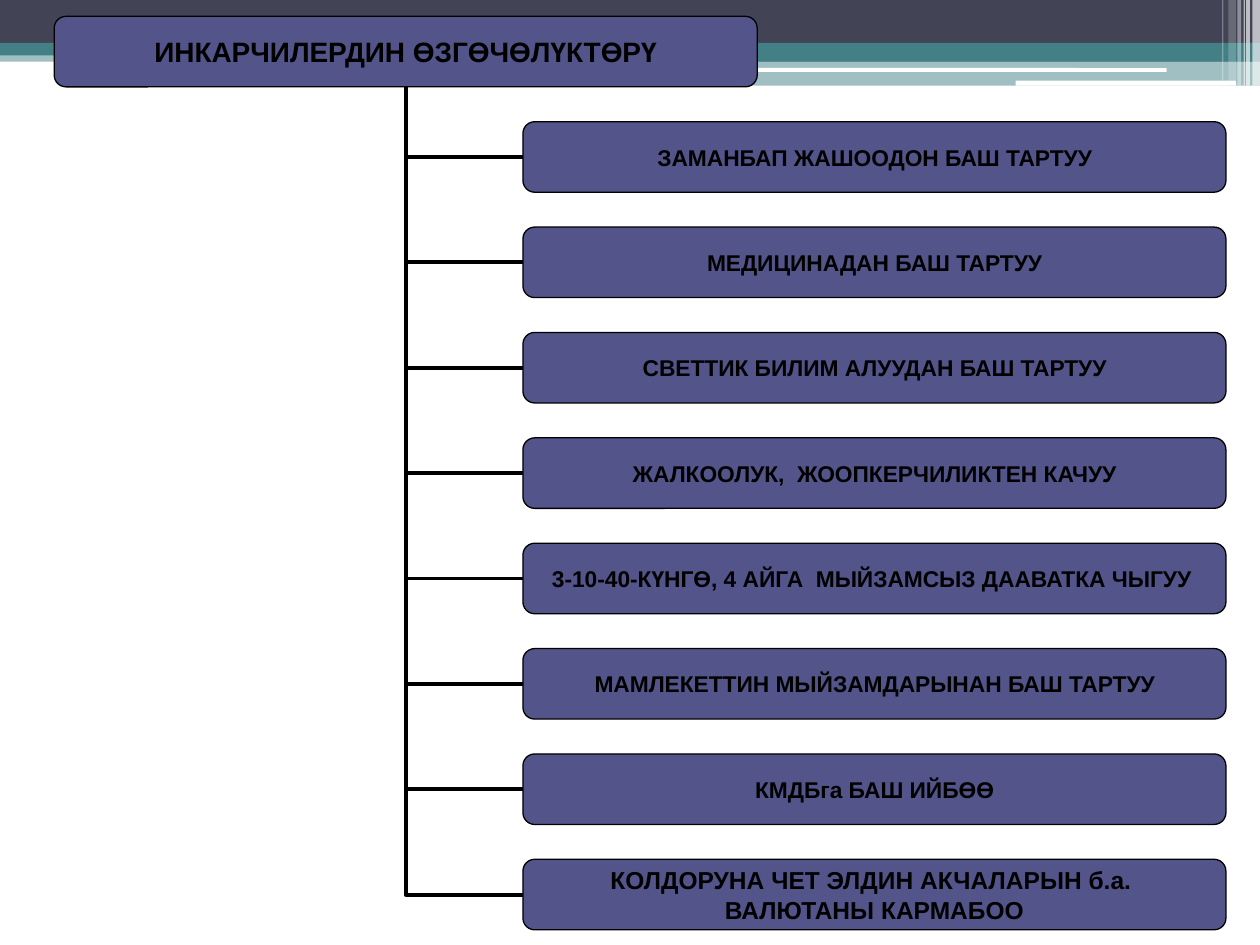
from dataclasses import dataclass

from lxml import etree
from pptx import Presentation
from pptx.dml.color import RGBColor
from pptx.enum.shapes import MSO_CONNECTOR, MSO_SHAPE
from pptx.enum.text import MSO_ANCHOR, PP_ALIGN
from pptx.oxml.ns import qn
from pptx.util import Inches, Pt

RECTANGLE = MSO_SHAPE.RECTANGLE
ROUNDED = MSO_SHAPE.ROUNDED_RECTANGLE
ELBOW = MSO_CONNECTOR.ELBOW
MIDDLE = MSO_ANCHOR.MIDDLE
CENTER = PP_ALIGN.CENTER


@dataclass(frozen=True)
class Theme:
    """Colours, font and point sizes of the slide."""
    dark: str = "424456"
    teal: str = "438086"
    white: str = "FFFFFF"
    box: str = "53548A"
    ink: str = "000000"
    font: str = "Arial"
    root_size: int = 16
    item_size: int = 13
    last_size: int = 14
    outline: float = 0.75
    branch: float = 2.25


THEME = Theme()

BANDS = [
    (RECTANGLE, 0, 0.4, 10, 0.09, THEME.teal, 50),
    (RECTANGLE, 0, 0, 10, 0.34, THEME.dark, 100),
    (RECTANGLE, 0, 0.34, 10, 0.1, THEME.teal, 100),
    (RECTANGLE, 5.92, 0.39, 4.08, 0.1, THEME.teal, 100),
    (RECTANGLE, 5.92, 0.48, 4.08, 0.2, THEME.teal, 50),
    (ROUNDED, 5.91, 0.54, 3.35, 0.03, THEME.white, 100),
    (ROUNDED, 8.06, 0.64, 1.75, 0.04, THEME.white, 100),
]
STRIPES = [
    (9.94, 0.06, 0.68, 65),
    (9.89, 0.03, 0.68, 65),
    (9.87, 0.01, 0.68, 60),
    (9.82, 0.03, 0.68, 40),
    (9.75, 0.06, 0.64, 20),
    (9.7, 0.01, 0.64, 30),
]

ROOT_TEXT = "ИНКАРЧИЛЕРДИН ӨЗГӨЧӨЛҮКТӨРҮ"
ITEMS = [
    "ЗАМАНБАП ЖАШООДОН БАШ ТАРТУУ",
    "МЕДИЦИНАДАН БАШ ТАРТУУ",
    "СВЕТТИК БИЛИМ АЛУУДАН БАШ ТАРТУУ",
    "ЖАЛКООЛУК,  ЖООПКЕРЧИЛИКТЕН КАЧУУ",
    "3-10-40-КҮНГӨ, 4 АЙГА  МЫЙЗАМСЫЗ ДААВАТКА ЧЫГУУ ",
    "МАМЛЕКЕТТИН МЫЙЗАМДАРЫНАН БАШ ТАРТУУ",
    "КМДБга БАШ ИЙБӨӨ",
    "КОЛДОРУНА ЧЕТ ЭЛДИН АКЧАЛАРЫН б.а. \nВАЛЮТАНЫ КАРМАБОО",
]

BOX_WIDTH, BOX_HEIGHT = 5.58, 0.56
ROOT_LEFT, ROOT_TOP = 0.43, 0.13
ITEM_LEFT, LAST_TOP = 4.15, 6.82
ROW_STEP = (LAST_TOP - ROOT_TOP) / len(ITEMS)


def add_block(slide, kind, left, top, width, height, color, opacity=100):
    """Add a filled shape without outline or shadow."""
    shape = slide.shapes.add_shape(
        kind, Inches(left), Inches(top), Inches(width), Inches(height))
    shape.shadow.inherit = False
    shape.fill.solid()
    shape.fill.fore_color.rgb = RGBColor.from_string(color)
    shape.line.fill.background()
    if opacity < 100:
        color_element = shape.fill._xPr.find(".//" + qn("a:srgbClr"))
        alpha = etree.SubElement(color_element, qn("a:alpha"))
        alpha.set("val", str(opacity * 1000))
    return shape


def add_box(slide, left, top, text, size):
    """Add a rounded chart box with centred bold text."""
    shape = add_block(slide, ROUNDED, left, top, BOX_WIDTH, BOX_HEIGHT, THEME.box)
    shape.line.color.rgb = RGBColor.from_string(THEME.ink)
    shape.line.width = Pt(THEME.outline)
    frame = shape.text_frame
    frame.margin_left = frame.margin_right = 0
    frame.margin_top = frame.margin_bottom = 0
    frame.word_wrap = False
    frame.vertical_anchor = MIDDLE
    frame.text = text
    for paragraph in frame.paragraphs:
        paragraph.alignment = CENTER
        for run in paragraph.runs:
            run.font.name = THEME.font
            run.font.size = Pt(size)
            run.font.bold = True
            run.font.color.rgb = RGBColor.from_string(THEME.ink)


def add_branch(slide, item_top):
    """Add a single-bend connector from an item back to the root box."""
    connector = slide.shapes.add_connector(
        ELBOW,
        Inches(ROOT_LEFT + BOX_WIDTH / 2), Inches(ROOT_TOP + BOX_HEIGHT),
        Inches(ITEM_LEFT), Inches(item_top + BOX_HEIGHT / 2))
    connector.line.color.rgb = RGBColor.from_string(THEME.ink)
    connector.line.width = Pt(THEME.branch)
    properties = connector._element.spPr
    properties.find(qn("a:prstGeom")).set("prst", "bentConnector2")
    properties.find(qn("a:xfrm")).set("rot", "10800000")
    etree.SubElement(properties, qn("a:effectLst"))


def add_header(slide):
    """Add the header bands and the translucent stripes at the right."""
    for band in BANDS:
        add_block(slide, *band)
    for left, width, height, opacity in STRIPES:
        add_block(slide, RECTANGLE, left, 0, width, height, THEME.white, opacity)


def add_hierarchy(slide):
    """Add the root box, its items and the branches between them."""
    tops = [ROOT_TOP + ROW_STEP * row for row in range(1, len(ITEMS) + 1)]
    for top in reversed(tops):
        add_branch(slide, top)
    add_box(slide, ROOT_LEFT, ROOT_TOP, ROOT_TEXT, THEME.root_size)
    for top, text in zip(tops, ITEMS):
        size = THEME.last_size if text == ITEMS[-1] else THEME.item_size
        add_box(slide, ITEM_LEFT, top, text, size)


def main():
    """Build and save the slide."""
    presentation = Presentation()
    presentation.slide_width = Inches(10)
    presentation.slide_height = Inches(7.5)
    slide = presentation.slides.add_slide(presentation.slide_layouts[6])
    add_header(slide)
    add_hierarchy(slide)
    presentation.save("out.pptx")


if __name__ == "__main__":
    main()
